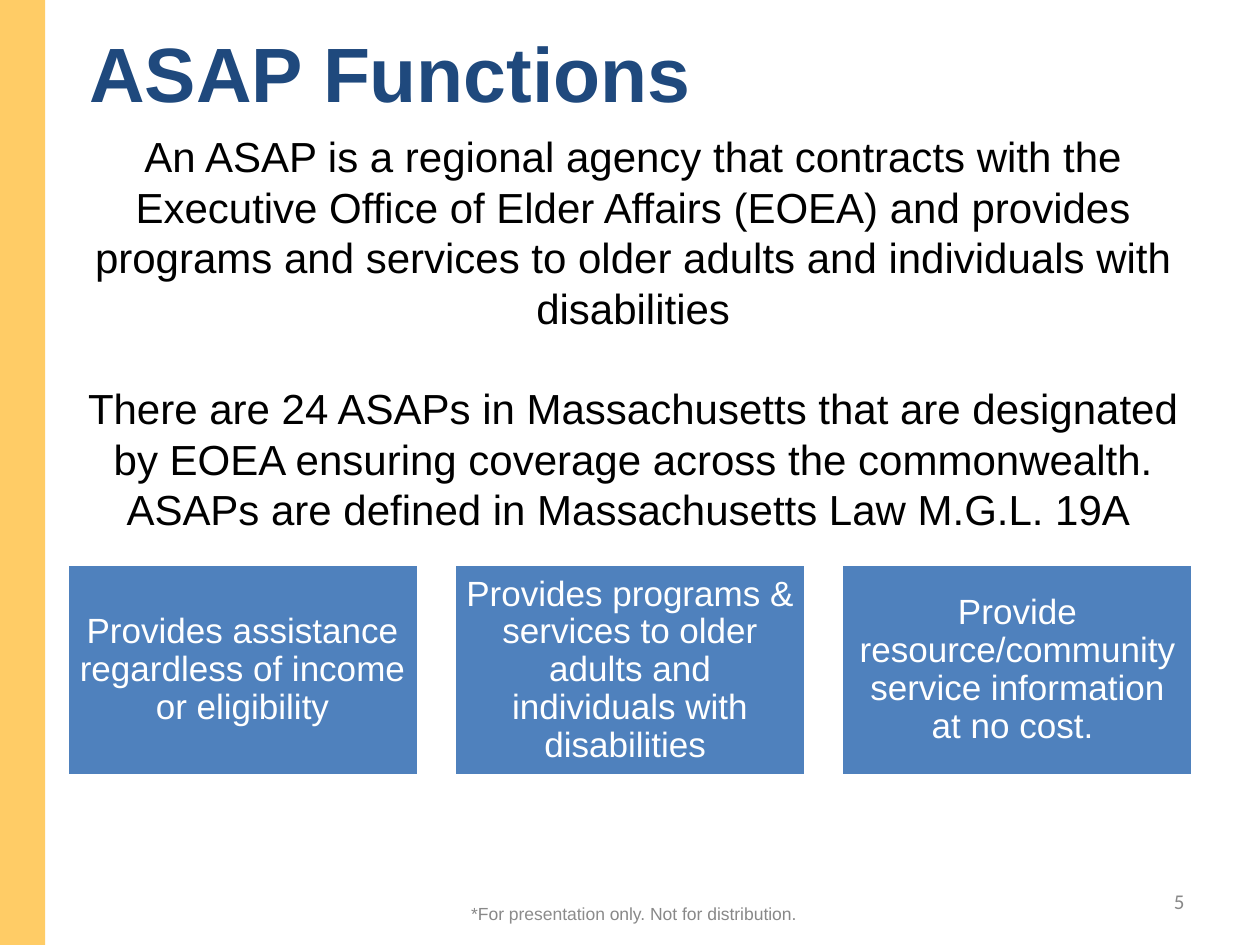
"""Build the ASAP Functions slide on a grid of 100 columns by 75 rows."""
import pptx
import pptx.dml.color
import pptx.enum.shapes
import pptx.enum.text
import pptx.util

COLORS = {
    "band": "FFCC66",
    "title": "1F497D",
    "body": "000000",
    "muted": "888888",
    "footer": "8C8C8C",
    "box": "4F81BD",
    "white": "FFFFFF",
}
COLUMNS, ROWS = 100, 75
CELL = pptx.util.Inches(0.1)
ALIGN = pptx.enum.text.PP_ALIGN
ANCHOR = pptx.enum.text.MSO_ANCHOR

DESCRIPTION = [
    "An ASAP is a regional agency that contracts with the Executive Office of "
    "Elder Affairs (EOEA) and provides programs and services to older adults "
    "and individuals with disabilities",
    "There are 24 ASAPs in Massachusetts that are designated by EOEA ensuring "
    "coverage across the commonwealth. ASAPs are defined in Massachusetts Law "
    "M.G.L. 19A ",
]
FUNCTIONS = [
    "Provides assistance regardless of income or eligibility",
    "Provides programs & services to older adults and individuals with disabilities ",
    "Provide resource/community service information at no cost. ",
]


def color(name):
    """Return the named colour."""
    return pptx.dml.color.RGBColor.from_string(COLORS[name])


def grid(*cells):
    """Convert columns and rows to lengths."""
    return [round(cell * CELL) for cell in cells]


def write(shape, texts, size, ink, align=ALIGN.CENTER, anchor=ANCHOR.TOP,
          font="Arial", bold=False, gap=0, spacing=1.0):
    """Fill a shape with one paragraph per text, and return its paragraphs."""
    frame = shape.text_frame
    frame.word_wrap = True
    frame.vertical_anchor = anchor
    frame.text = "\n".join(texts)
    for index, paragraph in enumerate(frame.paragraphs):
        paragraph.alignment = align
        paragraph.line_spacing = spacing
        paragraph.space_before = pptx.util.Pt(gap if index else 0)
        paragraph.font.name = font
        paragraph.font.size = pptx.util.Pt(size)
        paragraph.font.bold = bold
        paragraph.font.color.rgb = color(ink)
    return frame.paragraphs


def add_text(slide, cells, texts, size, ink, **style):
    """Add a text box at grid cells, and return its paragraphs."""
    return write(slide.shapes.add_textbox(*grid(*cells)), texts, size, ink, **style)


def add_rectangle(slide, cells, fill):
    """Add a plain filled rectangle at grid cells."""
    shape = slide.shapes.add_shape(
        pptx.enum.shapes.MSO_SHAPE.RECTANGLE, *grid(*cells))
    shape.shadow.inherit = False
    shape.fill.solid()
    shape.fill.fore_color.rgb = color(fill)
    shape.line.fill.background()
    return shape


def add_function_box(slide, cells, text):
    """Add a white-edged box that names one function."""
    shape = add_rectangle(slide, cells, "box")
    shape.line.color.rgb = color("white")
    shape.line.width = pptx.util.Pt(2)
    frame = shape.text_frame
    frame.margin_left = frame.margin_right = pptx.util.Inches(0.08)
    frame.margin_top = frame.margin_bottom = pptx.util.Inches(0.08)
    write(shape, [text], 20, "white", anchor=ANCHOR.MIDDLE, spacing=0.9)


def add_footer(slide):
    """Add the distribution note and the slide number."""
    paragraph, = add_text(slide, (33.4, 70.5, 33.8, 4), ["*For "], 10, "muted",
                          anchor=ANCHOR.MIDDLE)
    middle = paragraph.add_run()
    middle.text = "presentation "
    middle.font.color.rgb = color("footer")
    paragraph.add_run().text = "only. Not for distribution."
    add_text(slide, (71.7, 69.5, 23.3, 4), ["5"], 12, "muted",
             align=ALIGN.RIGHT, anchor=ANCHOR.MIDDLE, font="Calibri")


def main():
    """Build and save the slide."""
    presentation = pptx.Presentation()
    presentation.slide_width, presentation.slide_height = grid(COLUMNS, ROWS)
    slide = presentation.slides.add_slide(presentation.slide_layouts[6])
    add_rectangle(slide, (0, 0, 3.6, ROWS), "band")
    add_text(slide, (6.1, 1.5, 88.3, 8.4), ["ASAP Functions"], 44, "title",
             align=ALIGN.LEFT, bold=True)
    add_footer(slide)
    add_text(slide, (3.8, 9.9, 92.9, 35.7), DESCRIPTION, 24, "body", gap=28.8)
    width, pitch = 27.9, 30.75
    for index, text in enumerate(FUNCTIONS):
        add_function_box(slide, (5.3 + index * pitch, 44.8, width, 16.8), text)
    presentation.save("out.pptx")


if __name__ == "__main__":
    main()
